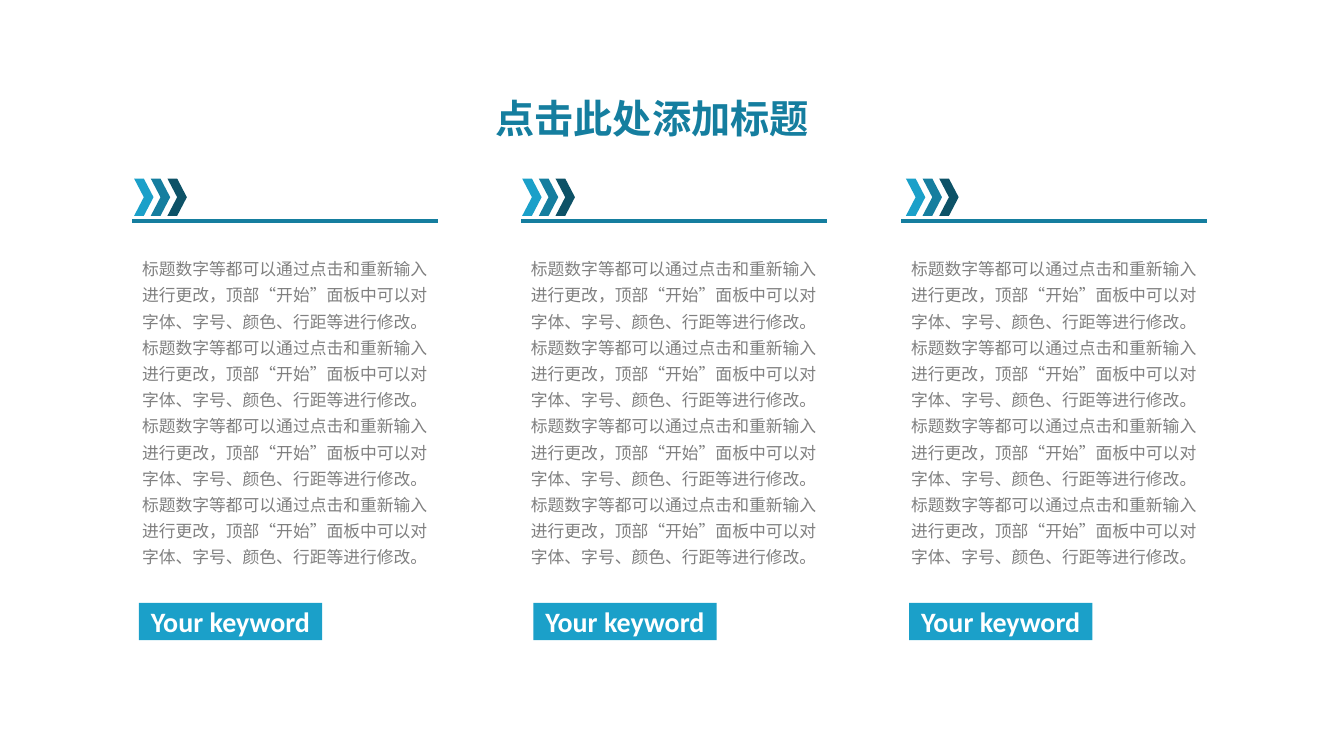
"""Build a slide with three text columns, each with chevrons, a rule and a keyword tag."""
from lxml import etree
from pptx import Presentation
from pptx.dml.color import RGBColor
from pptx.enum.shapes import MSO_CONNECTOR, MSO_SHAPE
from pptx.enum.text import MSO_ANCHOR, MSO_AUTO_SIZE, PP_ALIGN
from pptx.oxml.ns import qn
from pptx.util import Cm, Pt

RECT, CHEVRON = MSO_SHAPE.RECTANGLE, MSO_SHAPE.CHEVRON
STRAIGHT = MSO_CONNECTOR.STRAIGHT
CENTER, MIDDLE = PP_ALIGN.CENTER, MSO_ANCHOR.MIDDLE
GROW = MSO_AUTO_SIZE.SHAPE_TO_FIT_TEXT

LIGHT = RGBColor(0x1B, 0xA0, 0xC9)
TEAL = RGBColor(0x15, 0x7E, 0x9F)
DARK = RGBColor(0x0D, 0x52, 0x67)
GRAY = RGBColor(0x80, 0x80, 0x80)
WHITE = RGBColor(0xFF, 0xFF, 0xFF)

TITLE = "点击此处添加标题"
SENTENCE = "标题数字等都可以通过点击和重新输入进行更改，顶部“开始”面板中可以对字体、字号、颜色、行距等进行修改。"
BODY = SENTENCE * 4
COLUMNS = [
    {"left": 3.33, "chevrons": 3.38, "keyword": 3.5, "body": BODY, "tag": "Your keyword"},
    {"left": 13.13, "chevrons": 13.16, "keyword": 13.44, "body": BODY, "tag": "Your keyword"},
    {"left": 22.71, "chevrons": 22.83, "keyword": 22.91, "body": BODY, "tag": "Your keyword"},
]
CHEVRON_COLORS = [LIGHT, TEAL, DARK]
CHEVRON_STEP = 0.42
COLUMN_W = 7.72
RULE_Y = 5.56

CJK = "Noto Sans CJK SC"
TITLE_FONT = {"size": Pt(28), "name": CJK, "bold": True}
BODY_FONT = {"size": Pt(12), "name": CJK}
TAG_FONT = {"size": Pt(20), "name": "Calibri", "bold": True}


def write(tf, text, font, color):
    p = tf.paragraphs[0]
    r = p.add_run()
    r.text = text
    for key, value in font.items():
        setattr(r.font, key, value)
    r.font.color.rgb = color
    ea = etree.SubElement(r.font._element, qn("a:ea"))
    ea.set("typeface", font["name"])
    return p


def add_text(s, box, text, font, color):
    tf = s.shapes.add_textbox(*map(Cm, box)).text_frame
    tf.word_wrap = True
    tf.auto_size = GROW
    return write(tf, text, font, color)


def add_block(s, kind, box, color):
    sp = s.shapes.add_shape(kind, *map(Cm, box))
    sp.shadow.inherit = False
    sp.fill.solid()
    sp.fill.fore_color.rgb = color
    sp.line.fill.background()
    return sp


def add_rule(s, left):
    line = s.shapes.add_connector(
        STRAIGHT, Cm(left), Cm(RULE_Y), Cm(left + COLUMN_W), Cm(RULE_Y))
    line.line.color.rgb = TEAL
    line.line.width = Pt(3)
    etree.SubElement(line._element.spPr, qn("a:effectLst"))


def add_column(s, col):
    add_rule(s, col["left"])
    p = add_text(s, (col["left"], 6.25, COLUMN_W, 8.26), col["body"], BODY_FONT, GRAY)
    p.line_spacing = 1.3
    tf = add_block(s, RECT, (col["keyword"], 15.19, 4.62, 0.94), LIGHT).text_frame
    tf.vertical_anchor = MIDDLE
    write(tf, col["tag"], TAG_FONT, WHITE).alignment = CENTER
    for i, color in enumerate(CHEVRON_COLORS):
        left = col["chevrons"] + i * CHEVRON_STEP
        add_block(s, CHEVRON, (left, 4.5, 0.49, 0.94), color)


def main():
    prs = Presentation()
    prs.slide_width, prs.slide_height = Cm(33.87), Cm(19.05)
    s = prs.slides.add_slide(prs.slide_layouts[6])
    add_text(s, (12.24, 2.24, 8.74, 1.45), TITLE, TITLE_FONT, TEAL)
    for col in COLUMNS:
        add_column(s, col)
    prs.save("out.pptx")


if __name__ == "__main__":
    main()
